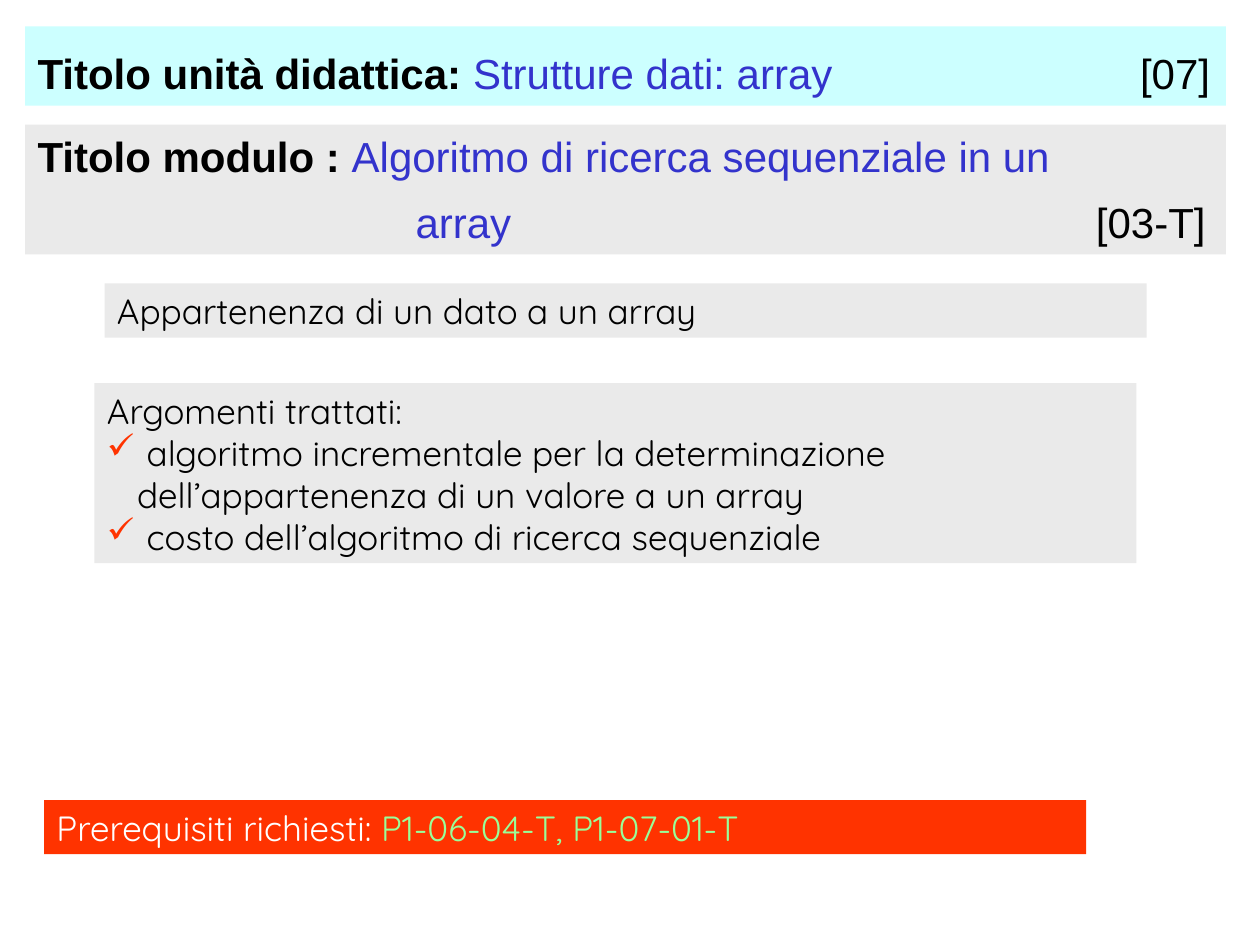
from dataclasses import dataclass

from lxml import etree
from pptx import Presentation
from pptx.dml.color import RGBColor
from pptx.enum.shapes import MSO_SHAPE
from pptx.enum.text import MSO_ANCHOR, PP_ALIGN
from pptx.oxml.ns import qn
from pptx.util import Inches, Pt

RECT = MSO_SHAPE.RECTANGLE
LEFT = PP_ALIGN.LEFT
TOP = MSO_ANCHOR.TOP
BOTTOM = MSO_ANCHOR.BOTTOM


@dataclass(frozen=True)
class Theme:
    cyan: str = "CCFFFF"
    grey: str = "EAEAEA"
    red: str = "FF3300"
    black: str = "000000"
    blue: str = "3333CC"
    white: str = "FFFFFF"
    green: str = "99FF99"
    title_font: str = "Arial"
    body_font: str = "Quicksand"
    title_size: int = 24
    body_size: int = 20


T = Theme()


def add_box(left, top, width, height, fill, font, size, anchor, paragraphs):
    sp = s.shapes.add_shape(RECT, Inches(left), Inches(top), Inches(width), Inches(height))
    sp.shadow.inherit = False
    sp.fill.solid()
    sp.fill.fore_color.rgb = RGBColor.from_string(fill)
    sp.line.fill.background()
    tf = sp.text_frame
    tf.word_wrap = True
    tf.vertical_anchor = anchor
    if anchor == BOTTOM:
        tf.margin_bottom = Inches(0.06)
    for i, runs in enumerate(paragraphs):
        p = tf.add_paragraph() if i else tf.paragraphs[0]
        p.alignment = LEFT
        for text, color, bold in runs:
            r = p.add_run()
            r.text = text
            r.font.name = font
            r.font.size = Pt(size)
            r.font.bold = bold
            r.font.color.rgb = RGBColor.from_string(color)
    return tf


def add_tabs(p, stops):
    tabs = etree.SubElement(p._p.get_or_add_pPr(), qn("a:tabLst"))
    for stop in stops:
        etree.SubElement(tabs, qn("a:tab"), pos=str(Inches(stop)), algn="l")


prs = Presentation()
prs.slide_width = Inches(10)
prs.slide_height = Inches(7.5)
s = prs.slides.add_slide(prs.slide_layouts[6])

unit = add_box(0.2, 0.21, 9.53, 0.63, T.cyan, T.title_font, T.title_size, BOTTOM, [
    [("Titolo unità didattica: ", T.black, True),
     ("Strutture dati: array", T.blue, False),
     ("\t[07]", T.black, False)],
])
add_tabs(unit.paragraphs[0], [8.75])

module = add_box(0.2, 0.99, 9.53, 1.03, T.grey, T.title_font, T.title_size, BOTTOM, [
    [("Titolo modulo : ", T.black, True),
     ("Algoritmo di ricerca sequenziale in un", T.blue, False)],
    [("\tarray", T.blue, False), ("\t[03-T]", T.black, False)],
])
module.paragraphs[1].space_before = Pt(9)
add_tabs(module.paragraphs[1], [3, 8.4])

add_box(0.83, 2.25, 8.27, 0.43, T.grey, T.body_font, T.body_size, TOP, [
    [("Appartenenza di un dato a un array", T.black, False)],
])

topics = add_box(0.75, 3.04, 8.27, 1.43, T.grey, T.body_font, T.body_size, TOP, [
    [(text, T.black, False)] for text in (
        "Argomenti trattati:",
        " algoritmo incrementale per la determinazione dell’appartenenza di un valore a un array",
        " costo dell’algoritmo di ricerca sequenziale",
    )
])
for p in topics.paragraphs[1:]:
    pPr = p._p.get_or_add_pPr()
    pPr.set("marL", str(Inches(0.24)))
    pPr.set("indent", str(-Inches(0.24)))
    color = etree.SubElement(pPr, qn("a:buClr"))
    etree.SubElement(color, qn("a:srgbClr"), val=T.red)
    etree.SubElement(pPr, qn("a:buChar"), char="✓")

add_box(0.35, 6.35, 8.27, 0.43, T.red, T.body_font, T.body_size, TOP, [
    [("Prerequisiti richiesti: ", T.white, False),
     ("P1-06-04-T, P1-07-01-T", T.green, False)],
])

prs.save("out.pptx")
